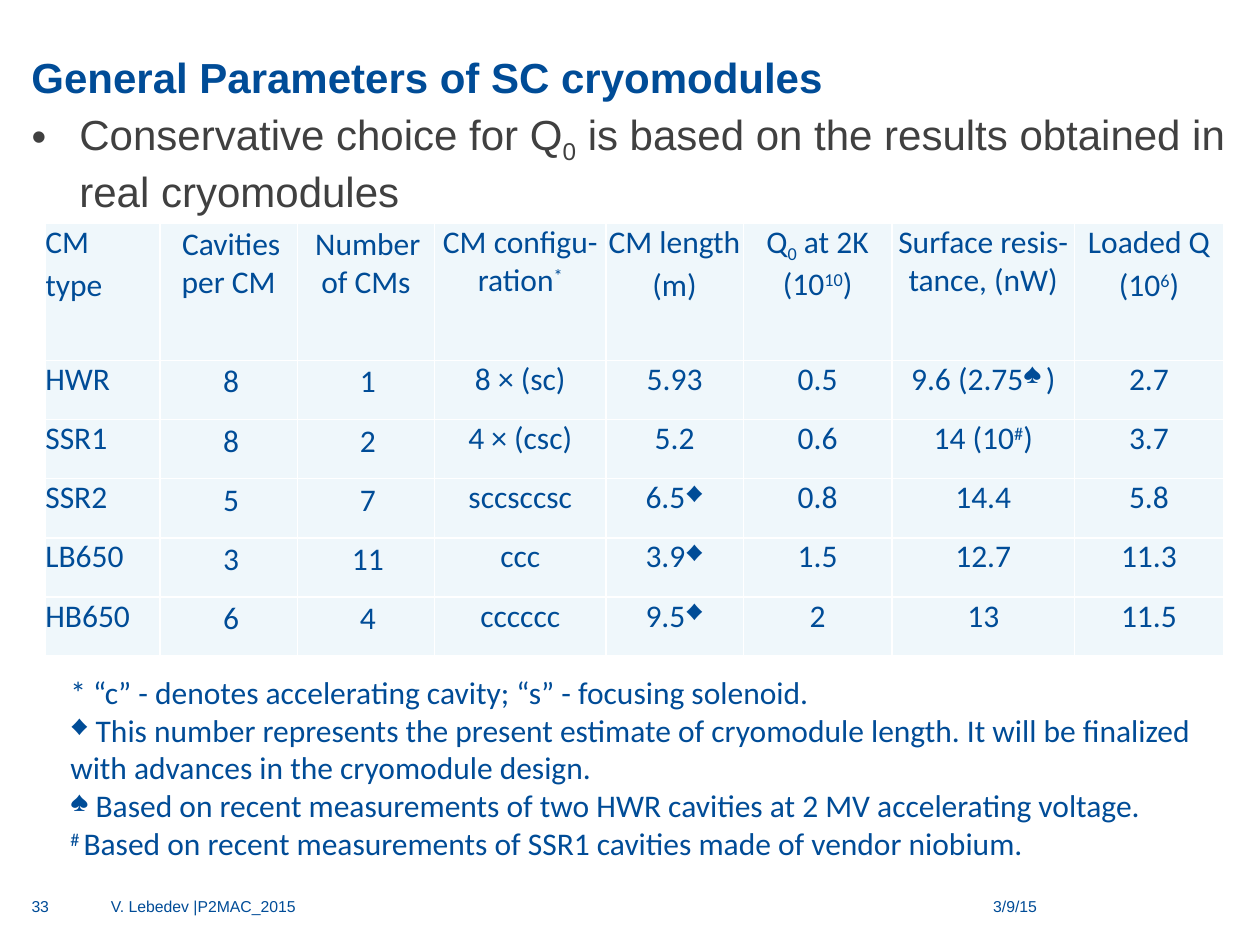
"""Build the slide on general parameters of SC cryomodules."""
from lxml import etree
from pptx import Presentation
from pptx.dml.color import RGBColor
from pptx.enum.text import MSO_ANCHOR, PP_ALIGN
from pptx.oxml.ns import qn
from pptx.util import Inches, Pt

LEFT, CENTER, RIGHT, JUSTIFY = PP_ALIGN.LEFT, PP_ALIGN.CENTER, PP_ALIGN.RIGHT, PP_ALIGN.JUSTIFY
TOP, BOTTOM = MSO_ANCHOR.TOP, MSO_ANCHOR.BOTTOM
BLUE = RGBColor(0x00, 0x4C, 0x97)
GRAY = RGBColor(0x40, 0x40, 0x40)
PALE_BLUE = RGBColor(0xEF, 0xF7, 0xFB)
WHITE = RGBColor(0xFF, 0xFF, 0xFF)
SUPERSCRIPT, SUBSCRIPT = "30000", "-25000"

COLUMN_WIDTHS = [0.91, 1.09, 1.09, 1.36, 1.09, 1.18, 1.45, 1.18]
HEADER_HEIGHT, ROW_HEIGHT = 1.09, 0.47
FIRST_LINE_INDENTS = {1: 0.04, 2: 0.03}
CRYOMODULES = [
    ["CM\ntype", "Cavities per CM", "Number of CMs", "CM configu-ration^*^", "CM length\n(m)",
     "Q~0~ at 2K (10^10^)", "Surface resis-tance, (nW)", "Loaded Q\n(10^6^)"],
    ["HWR", "8", "1", "8 × (sc)", "5.93", "0.5", "9.6 (2.75^♠ ^)", "2.7"],
    ["SSR1", "8", "2", "4 × (csc)", "5.2", "0.6", "14 (10^#^)", "3.7"],
    ["SSR2", "5", "7", "sccsccsc", "6.5^♦^", "0.8", "14.4", "5.8"],
    ["LB650", "3", "11", "ccc", "3.9^♦^", "1.5", "12.7", "11.3"],
    ["HB650", "6", "4", "cccccc", "9.5^♦^", "2", "13", "11.5"],
]
FOOTNOTES = "\n".join([
    "* “c” - denotes accelerating cavity; “s” - focusing solenoid.",
    "^♦^ This number represents the present estimate of cryomodule length. "
    "It will be finalized with advances in the cryomodule design.",
    "^♠^ Based on recent measurements of two HWR cavities at 2 MV accelerating voltage.",
    "^# ^Based on recent measurements of SSR1 cavities made of vendor niobium.",
])


def add_run(paragraph, text, size, font, color, bold, baseline):
    """Append one formatted run."""
    run = paragraph.add_run()
    run.text = text
    run.font.size = Pt(size)
    run.font.name = font
    run.font.bold = bold
    run.font.color.rgb = color
    if baseline:
        run.font._element.set("baseline", baseline)


def write_text(frame, text, size, font="Arial", color=BLUE, bold=False, align=LEFT):
    """Fill a frame, one paragraph a line; ^x^ is superscript and ~x~ subscript."""
    for number, line in enumerate(text.split("\n")):
        paragraph = frame.add_paragraph() if number else frame.paragraphs[0]
        paragraph.alignment = align
        for i, part in enumerate(line.split("^")):
            for j, piece in enumerate(part.split("~")):
                if piece:
                    baseline = SUPERSCRIPT if i % 2 else SUBSCRIPT if j % 2 else None
                    add_run(paragraph, piece, size, font, color, bold, baseline)


def indent(paragraph, first_line, margin=0):
    """Set the left margin and first-line indent of a paragraph."""
    properties = paragraph._p.get_or_add_pPr()
    properties.set("marL", str(Inches(margin)))
    properties.set("indent", str(Inches(first_line)))
    return properties


def add_text(slide, box, text, size, inset=(0, 0), anchor=TOP, **style):
    """Add a wrapped text box and return its frame."""
    frame = slide.shapes.add_textbox(*map(Inches, box)).text_frame
    frame.word_wrap = True
    frame.vertical_anchor = anchor
    frame.margin_left = frame.margin_right = Inches(inset[0])
    frame.margin_top = frame.margin_bottom = Inches(inset[1])
    write_text(frame, text, size, **style)
    return frame


def add_bullet(slide, box, text):
    """Add a bulleted statement with a hanging indent."""
    frame = add_text(slide, box, text, 24, color=GRAY)
    properties = indent(frame.paragraphs[0], -0.38, 0.38)
    etree.SubElement(properties, qn("a:buFont"), typeface="Arial")
    etree.SubElement(properties, qn("a:buChar"), char="•")


def set_borders(cell):
    """Draw white lines on all four sides of a cell."""
    properties = cell._tc.get_or_add_tcPr()
    for position, side in enumerate(("a:lnL", "a:lnR", "a:lnT", "a:lnB")):
        line = etree.Element(qn(side), w=str(Pt(1)))
        fill = etree.SubElement(line, qn("a:solidFill"))
        etree.SubElement(fill, qn("a:srgbClr"), val=str(WHITE))
        properties.insert(position, line)


def fill_cell(cell, text, column):
    """Write and style one table cell."""
    first_line = FIRST_LINE_INDENTS.get(column)
    cell.margin_left = cell.margin_right = Inches(0.04 if first_line else 0)
    cell.margin_top = cell.margin_bottom = Inches(0.02 if first_line else 0)
    cell.fill.solid()
    cell.fill.fore_color.rgb = PALE_BLUE
    set_borders(cell)
    write_text(cell.text_frame, text, 18, font="Calibri", align=CENTER if column else JUSTIFY)
    for paragraph in cell.text_frame.paragraphs:
        paragraph.space_after = Pt(3)
        if first_line:
            indent(paragraph, first_line)


def add_parameter_table(slide, left, top):
    """Add the table of cryomodule parameters."""
    heights = [HEADER_HEIGHT] + [ROW_HEIGHT] * (len(CRYOMODULES) - 1)
    table = slide.shapes.add_table(
        len(heights), len(COLUMN_WIDTHS), Inches(left), Inches(top),
        Inches(sum(COLUMN_WIDTHS)), Inches(sum(heights))).table
    for column, width in zip(table.columns, COLUMN_WIDTHS):
        column.width = Inches(width)
    for row, height, texts in zip(table.rows, heights, CRYOMODULES):
        row.height = Inches(height)
        for column, (cell, text) in enumerate(zip(row.cells, texts)):
            fill_cell(cell, text, column)


def main():
    """Assemble and save the slide."""
    presentation = Presentation()
    presentation.slide_width = Inches(10)
    presentation.slide_height = Inches(7.5)
    slide = presentation.slides.add_slide(presentation.slide_layouts[6])
    add_text(slide, (0.25, 0.11, 9.5, 0.7), "General Parameters of SC cryomodules", 24,
             anchor=BOTTOM, bold=True)
    add_parameter_table(slide, 0.36, 1.77)
    add_text(slide, (7.05, 7.12, 1.18, 0.26), "3/9/15", 9, align=RIGHT)
    add_text(slide, (0.88, 7.12, 5.88, 0.26), "V. Lebedev |P2MAC_2015", 9)
    add_text(slide, (0.25, 7.12, 0.49, 0.26), "33", 9)
    add_text(slide, (0.46, 5.29, 9.23, 1.62), FOOTNOTES, 18, inset=(0.1, 0.05), font="Calibri")
    add_bullet(slide, (0.25, 0.86, 9.65, 0.78),
               "Conservative choice for Q~0~ is based on the results obtained in real cryomodules")
    presentation.save("out.pptx")


if __name__ == "__main__":
    main()
